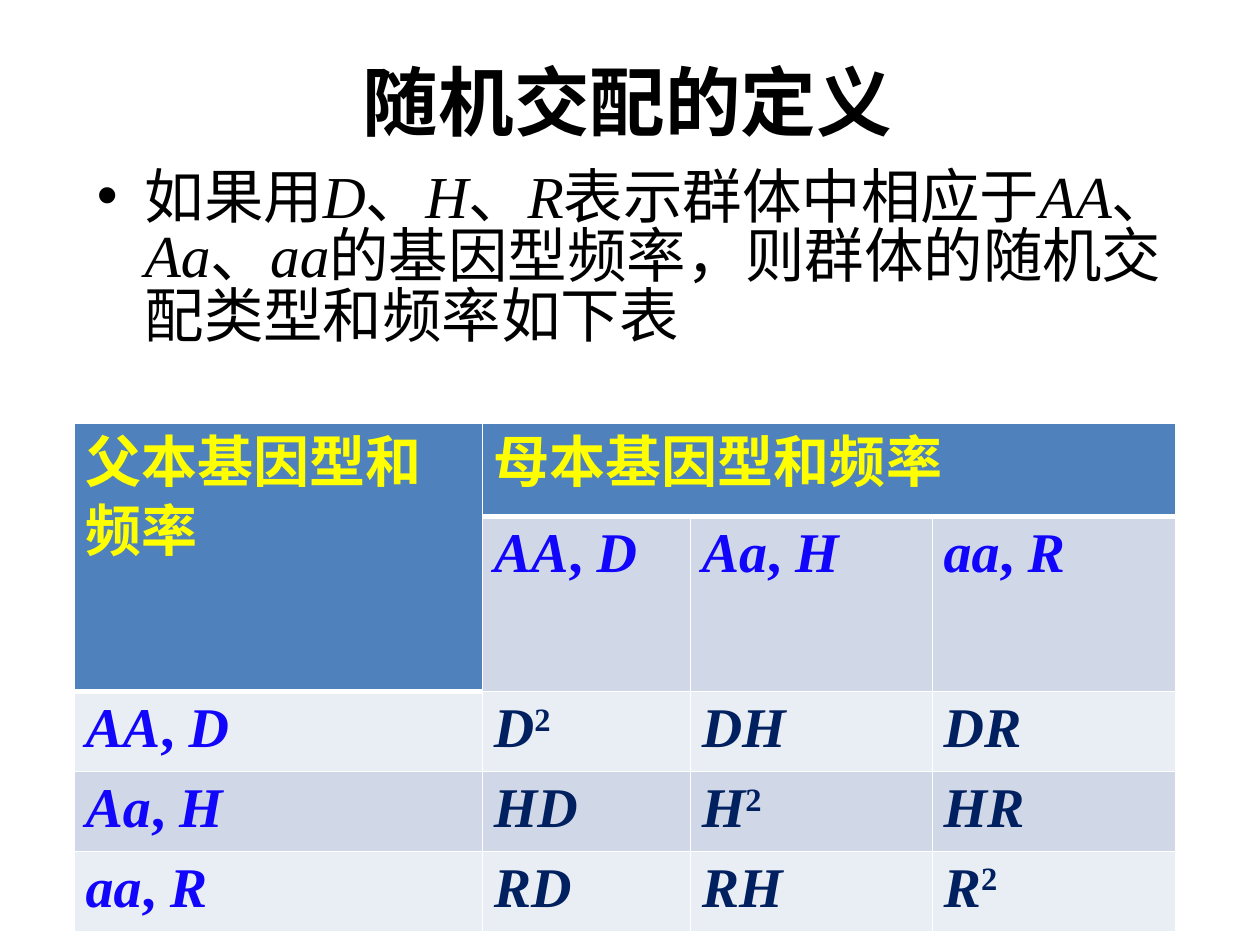
"""Build the slide that defines random mating with its genotype frequency table."""
from lxml.etree import SubElement
from pptx import Presentation
from pptx.dml.color import RGBColor
from pptx.enum.text import MSO_ANCHOR, PP_ALIGN
from pptx.oxml.ns import qn
from pptx.util import Inches, Pt

BLACK = RGBColor(0x00, 0x00, 0x00)
WHITE = RGBColor(0xFF, 0xFF, 0xFF)
YELLOW = RGBColor(0xFF, 0xFF, 0x00)
BLUE = RGBColor(0x11, 0x05, 0xFB)
NAVY = RGBColor(0x00, 0x20, 0x60)
HEADER_FILL = RGBColor(0x4F, 0x81, 0xBD)
BAND_FILLS = (RGBColor(0xE9, 0xED, 0xF4), RGBColor(0xD0, 0xD8, 0xE8))
SERIF = "Times New Roman"
SANS = "Calibri"

TITLE = "随机交配的定义"
BODY = [
    "如果用", "D", "、", "H", "、", "R", "表示群体中相应于",
    "AA", "、", "Aa", "、", "aa",
    "的基因型频率，则群体的随机交配类型和频率如下表",
]
FATHER_HEADER = "父本基因型和频率"
MOTHER_HEADER = "母本基因型和频率"
GENOTYPES = [("AA", "D"), ("Aa", "H"), ("aa", "R")]
COLUMN_WIDTHS = [3.24, 1.65, 1.92, 1.93]
ROW_HEIGHTS = [0.74, 1.39, 0.5, 0.5, 0.5]


def add_run(paragraph, text, size, color, font=SERIF, bold=False, italic=False):
    run = paragraph.add_run()
    run.text = text
    run.font.name = font
    run.font.size = Pt(size)
    run.font.color.rgb = color
    run.font.bold = bold
    run.font.italic = italic
    SubElement(run.font._element, qn("a:ea")).set("typeface", SANS)
    return run


def add_text_box(slide, left, top, width, height, anchor):
    shape = slide.shapes.add_textbox(
        Inches(left), Inches(top), Inches(width), Inches(height))
    shape.text_frame.word_wrap = True
    shape.text_frame.vertical_anchor = anchor
    return shape.text_frame.paragraphs[0]


def set_borders(cell, top=1, bottom=1):
    properties = cell._tc.get_or_add_tcPr()
    sides = (("a:lnL", 1), ("a:lnR", 1), ("a:lnT", top), ("a:lnB", bottom))
    for position, (tag, width) in enumerate(sides):
        line = SubElement(properties, qn(tag), w=str(Pt(width)))
        fill = SubElement(line, qn("a:solidFill"))
        SubElement(fill, qn("a:srgbClr"), val=str(WHITE))
        properties.insert(position, line)


def add_cell_text(cell, text, color, italic=True):
    return add_run(cell.text_frame.paragraphs[0], text, 32, color,
                   bold=True, italic=italic)


def add_genotype(cell, genotype, frequency):
    add_cell_text(cell, genotype, BLUE)
    add_cell_text(cell, ", ", BLUE, italic=False)
    add_cell_text(cell, frequency, BLUE)


def add_product(cell, father, mother):
    if father != mother:
        add_cell_text(cell, father + mother, NAVY)
        return
    add_cell_text(cell, father, NAVY)
    exponent = add_cell_text(cell, "2", NAVY, italic=False)
    exponent.font._element.set("baseline", "30000")


def add_title(slide):
    paragraph = add_text_box(slide, 1.3, 0.36, 7.36, 0.87, MSO_ANCHOR.MIDDLE)
    paragraph.alignment = PP_ALIGN.CENTER
    add_run(paragraph, TITLE, 43.2, BLACK, font=SANS, bold=True)


def add_body(slide):
    paragraph = add_text_box(slide, 0.67, 1.31, 8.74, 1.97, MSO_ANCHOR.TOP)
    paragraph.line_spacing = 0.83
    paragraph.space_before = Pt(3)
    properties = paragraph._p.get_or_add_pPr()
    properties.set("marL", str(Inches(0.38)))
    properties.set("indent", str(Inches(-0.38)))
    SubElement(properties, qn("a:buFont"), typeface="Arial")
    SubElement(properties, qn("a:buChar"), char="•")
    for text in BODY:
        add_run(paragraph, text, 34, BLACK, italic=text.isascii())


def add_frequency_table(slide):
    table = slide.shapes.add_table(
        len(ROW_HEIGHTS), len(COLUMN_WIDTHS), Inches(0.59), Inches(3.36),
        Inches(sum(COLUMN_WIDTHS)), Inches(sum(ROW_HEIGHTS))).table
    for column, width in zip(table.columns, COLUMN_WIDTHS):
        column.width = Inches(width)
    for row, height in zip(table.rows, ROW_HEIGHTS):
        row.height = Inches(height)

    for row in range(len(ROW_HEIGHTS)):
        for column in range(len(COLUMN_WIDTHS)):
            cell = table.cell(row, column)
            cell.margin_left = cell.margin_right = Inches(0.09)
            is_header = row == 0 or (row == 1 and column == 0)
            below_header = row == (2 if column == 0 else 1)
            cell.fill.solid()
            cell.fill.fore_color.rgb = HEADER_FILL if is_header else BAND_FILLS[row % 2]
            set_borders(cell, top=3 if below_header else 1,
                        bottom=3 if is_header else 1)

    table.cell(0, 0).merge(table.cell(1, 0))
    table.cell(0, 1).merge(table.cell(0, 3))
    add_cell_text(table.cell(0, 0), FATHER_HEADER, YELLOW, italic=False)
    add_cell_text(table.cell(0, 1), MOTHER_HEADER, YELLOW, italic=False)
    for index, (genotype, father) in enumerate(GENOTYPES):
        add_genotype(table.cell(1, index + 1), genotype, father)
        add_genotype(table.cell(index + 2, 0), genotype, father)
        for column, (_, mother) in enumerate(GENOTYPES, start=1):
            add_product(table.cell(index + 2, column), father, mother)


def main():
    presentation = Presentation()
    presentation.slide_width = Inches(10)
    presentation.slide_height = Inches(7.5)
    slide = presentation.slides.add_slide(presentation.slide_layouts[6])
    add_title(slide)
    add_body(slide)
    add_frequency_table(slide)
    presentation.save("out.pptx")


if __name__ == "__main__":
    main()
